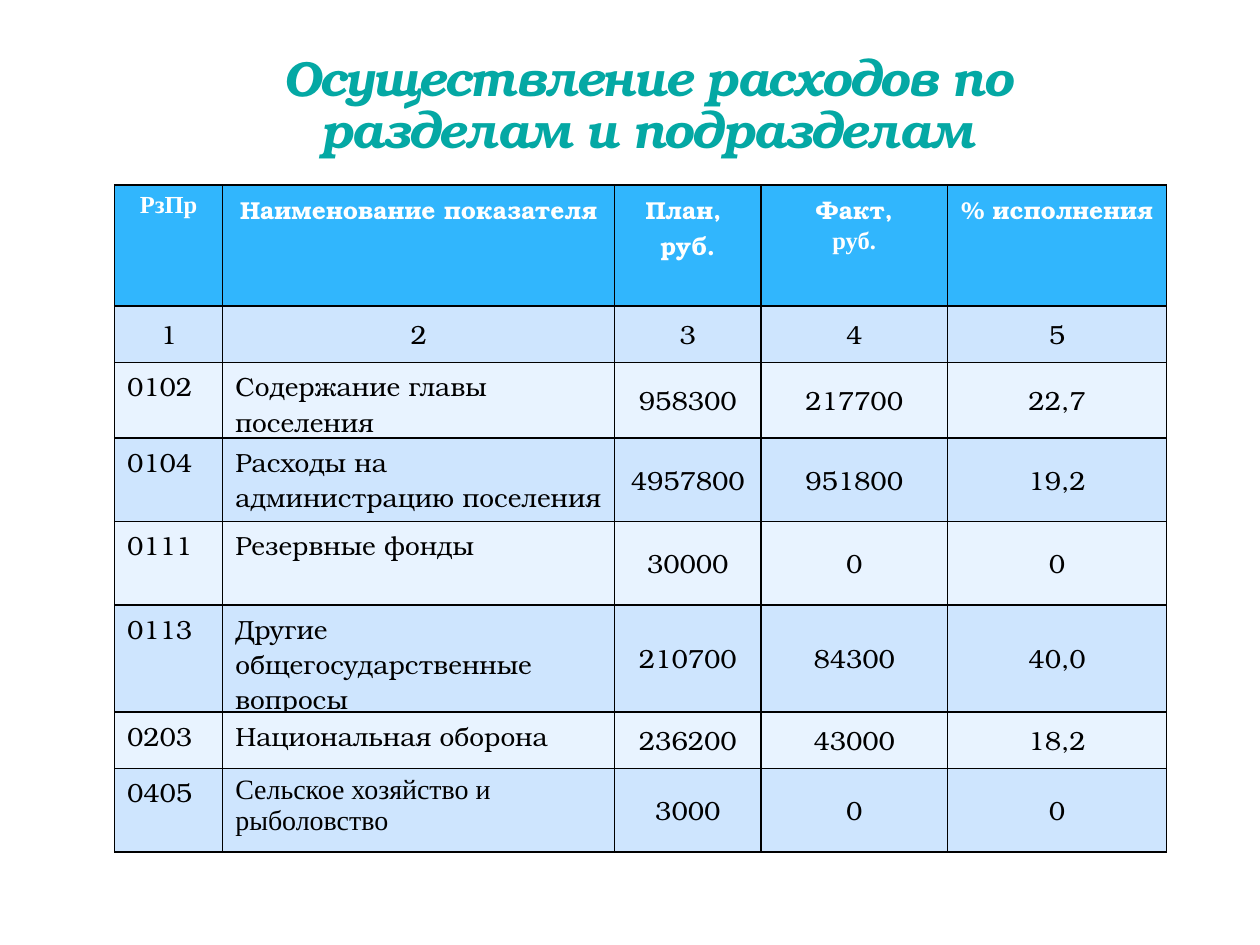
from dataclasses import dataclass

from lxml import etree
from pptx import Presentation
from pptx import util as u
from pptx.dml import color
from pptx.enum import text
from pptx.oxml import ns


@dataclass(frozen=True)
class Theme:
    serif: str = "TeX Gyre Bonum"
    plain: str = "Times New Roman"
    title: str = "04A8A4"
    header: str = "31B6FD"
    bands: tuple = ("CEE5FE", "E8F3FF")
    white: str = "FFFFFF"
    black: str = "000000"
    title_size: int = 28
    header_size: int = 14
    body_size: int = 15
    plain_size: int = 16


theme = Theme()


def set_font(paragraph, name, size, rgb, bold=False):
    font = paragraph.font
    font.name, font.size, font.bold = name, u.Pt(size), bold
    font.color.rgb = color.RGBColor.from_string(rgb)


def add_borders(cell):
    properties = cell._tc.get_or_add_tcPr()
    for side in ("lnL", "lnR", "lnT", "lnB"):
        line = etree.SubElement(properties, ns.qn(f"a:{side}"), w=str(u.Pt(1)))
        fill = etree.SubElement(line, ns.qn("a:solidFill"))
        etree.SubElement(fill, ns.qn("a:srgbClr"), val=theme.black)


presentation = Presentation()
presentation.slide_width, presentation.slide_height = u.Cm(25.4), u.Cm(19.05)
slide = presentation.slides.add_slide(presentation.slide_layouts[6])

# Title
title = slide.shapes.add_textbox(u.Cm(3.3), u.Cm(1.93), u.Cm(19.5), u.Cm(1.27))
frame = title.text_frame
frame.word_wrap = True
frame.vertical_anchor = text.MSO_ANCHOR.BOTTOM
frame.margin_bottom = 0
paragraph = frame.paragraphs[0]
paragraph.alignment = text.PP_ALIGN.CENTER
paragraph.line_spacing = 0.88
run = paragraph.add_run()
run.text = "Осуществление расходов по разделам и подразделам"
set_font(paragraph, theme.serif, theme.title_size, theme.title, bold=True)
paragraph.font.italic = True
run.font._element.set("spc", "-100")  # letter spacing of -1 pt

# Table contents
rows = [
    ("РзПр", "Наименование показателя", "План, \nруб.", "Факт,\nруб.", "% исполнения"),
    ("1", "2", "3", "4", "5"),
    ("0102", "Содержание главы поселения", "958300", "217700", "22,7"),
    ("0104", "Расходы на администрацию поселения", "4957800", "951800", "19,2"),
    ("0111", "Резервные фонды", "30000", "0", "0"),
    ("0113", "Другие общегосударственные вопросы", "210700", "84300", "40,0"),
    ("0203", "Национальная оборона", "236200", "43000", "18,2"),
    ("0405", "Сельское хозяйство и рыболовство", "3000", "0", "0"),
]
column_widths = (2.18, 7.9, 2.95, 3.76, 4.42)
row_heights = (2.44, 1.14, 1.14, 1.68, 1.68, 1.68, 1.14, 1.68)
# Paragraphs in the plain font: (row, column, line)
plain_lines = {(0, 0, 0), (0, 3, 1), (7, 1, 0)}

# Table grid
table = slide.shapes.add_table(
    len(rows), len(column_widths), u.Cm(2.31), u.Cm(3.73),
    u.Cm(sum(column_widths)), u.Cm(sum(row_heights))).table
for column, width in zip(table.columns, column_widths):
    column.width = u.Cm(width)
for row, height in zip(table.rows, row_heights):
    row.height = u.Cm(height)

# Table cells
for r, values in enumerate(rows):
    is_header = r == 0
    for c, value in enumerate(values):
        cell = table.cell(r, c)
        add_borders(cell)
        cell.fill.solid()
        cell.fill.fore_color.rgb = color.RGBColor.from_string(
            theme.header if is_header else theme.bands[(r - 1) % 2])
        is_label = r > 1 and c < 2
        if not is_header and not is_label:
            cell.vertical_anchor = text.MSO_ANCHOR.MIDDLE
        cell.text = value
        for line, paragraph in enumerate(cell.text_frame.paragraphs):
            if not is_label:
                paragraph.alignment = text.PP_ALIGN.CENTER
            is_plain = (r, c, line) in plain_lines
            name = theme.plain if is_plain else theme.serif
            if is_header:
                set_font(paragraph, name, theme.header_size, theme.white, bold=True)
            else:
                size = theme.plain_size if is_plain else theme.body_size
                set_font(paragraph, name, size, theme.black)

presentation.save("out.pptx")
